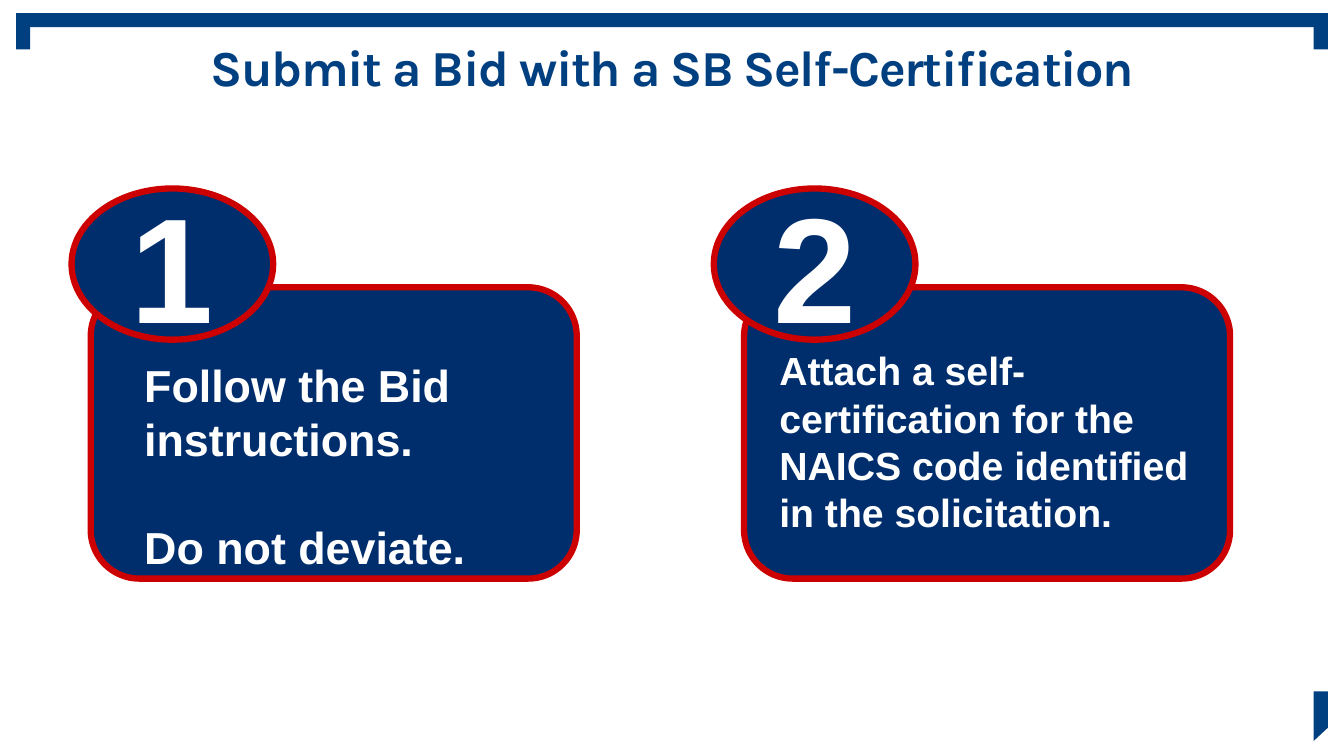
import pptx
import pptx.util
import pptx.dml.color
import pptx.enum.shapes
import pptx.enum.text

Inches = pptx.util.Inches
Pt = pptx.util.Pt
SHAPES = pptx.enum.shapes.MSO_SHAPE
ALIGN = pptx.enum.text.PP_ALIGN
ANCHOR = pptx.enum.text.MSO_ANCHOR


def colour(value):
    return pptx.dml.color.RGBColor.from_string(value)


class SlideBuilder:
    frame_blue = "003F80"
    card_blue = "002E6D"
    red = "CC0000"
    margins = {
        "margin_left": Inches(0.13),
        "margin_right": Inches(0.13),
        "margin_top": Inches(0.07),
        "margin_bottom": Inches(0.07),
        "word_wrap": True,
    }

    def __init__(self, slide):
        self.slide = slide

    def apply(self, target, values):
        for name, value in values.items():
            setattr(target, name, value)

    def paint(self, shape, fill, line=None):
        shape.shadow.inherit = False
        shape.fill.solid()
        shape.fill.fore_color.rgb = colour(fill)
        if line:
            shape.line.color.rgb = colour(line)
            shape.line.width = Pt(4.5)
        else:
            shape.line.fill.background()

    def fill_text(self, shape, lines, size, font="Arial", text_colour="FFFFFF",
                  align=ALIGN.LEFT, anchor=ANCHOR.TOP, gap=0, spacing=1.0):
        frame = shape.text_frame
        self.apply(frame, {**self.margins, "vertical_anchor": anchor})
        for index, line in enumerate(lines):
            paragraph = frame.add_paragraph() if index else frame.paragraphs[0]
            run = paragraph.add_run()
            run.text = line
            self.apply(paragraph, {"alignment": align, "line_spacing": spacing})
            if index:
                paragraph.space_before = Pt(gap)
            self.apply(run.font, {"name": font, "size": Pt(size), "bold": True})
            run.font.color.rgb = colour(text_colour)

    def shape(self, kind, box, fill, line=None):
        shape = self.slide.shapes.add_shape(kind, *map(Inches, box))
        self.paint(shape, fill, line)
        return shape

    def corner_mark(self, points):
        first, *rest = [(Inches(x), Inches(y)) for x, y in points]
        builder = self.slide.shapes.build_freeform(*first)
        builder.add_line_segments(rest, close=True)
        self.paint(builder.convert_to_shape(), self.frame_blue)

    def title(self, text):
        title = self.slide.shapes.title
        self.apply(title, {"left": Inches(0.67), "top": Inches(0.23),
                           "width": Inches(12), "height": Inches(0.94)})
        self.fill_text(title, [text], 36, "Karla", self.frame_blue,
                       ALIGN.CENTER, ANCHOR.MIDDLE, spacing=0.9)
        run = title.text_frame.paragraphs[0].runs[0]
        run._r.get_or_add_rPr().set("spc", "-100")

    def card(self, left):
        card = self.shape(SHAPES.ROUNDED_RECTANGLE, (left, 2.85, 4.82, 2.89),
                          self.card_blue, self.red)
        card.adjustments[0] = 0.167

    def badge(self, left, number):
        badge = self.shape(SHAPES.FLOWCHART_CONNECTOR, (left, 1.87, 2, 1.5),
                           self.card_blue, self.red)
        self.fill_text(badge, [number], 106.7, align=ALIGN.CENTER, anchor=ANCHOR.MIDDLE)

    def text(self, box, lines, size, gap=0):
        textbox = self.slide.shapes.add_textbox(*map(Inches, box))
        self.fill_text(textbox, lines, size, gap=gap)


def main():
    presentation = pptx.Presentation()
    presentation.slide_width = Inches(13.33)
    presentation.slide_height = Inches(7.5)
    slide = presentation.slides.add_slide(presentation.slide_layouts[5])
    builder = SlideBuilder(slide)

    for box in ((13.03, 0.13, 0.14, 0.36), (0.16, 0.13, 13.01, 0.14),
                (0.16, 0.13, 0.14, 0.36)):
        builder.shape(SHAPES.RECTANGLE, box, builder.frame_blue)
    builder.corner_mark([(13.03, 6.86), (13.17, 6.86), (13.17, 7.22), (13.03, 7.35)])
    builder.title("Submit a Bid with a SB Self-Certification")

    steps = [
        (0.9, 0.71, (1.3, 3.48, 4.02, 2.12),
         ["Follow the Bid instructions.", "Do not deviate."], 32),
        (7.38, 7.08, (7.6, 3.37, 4.64, 2.12),
         ["Attach a self-certification for the NAICS code identified in the solicitation."], 28),
    ]
    for number, (card_left, badge_left, box, lines, size) in enumerate(steps, 1):
        builder.card(card_left)
        builder.badge(badge_left, str(number))
        builder.text(box, lines, size, gap=38.5)

    presentation.save("out.pptx")


if __name__ == "__main__":
    main()
